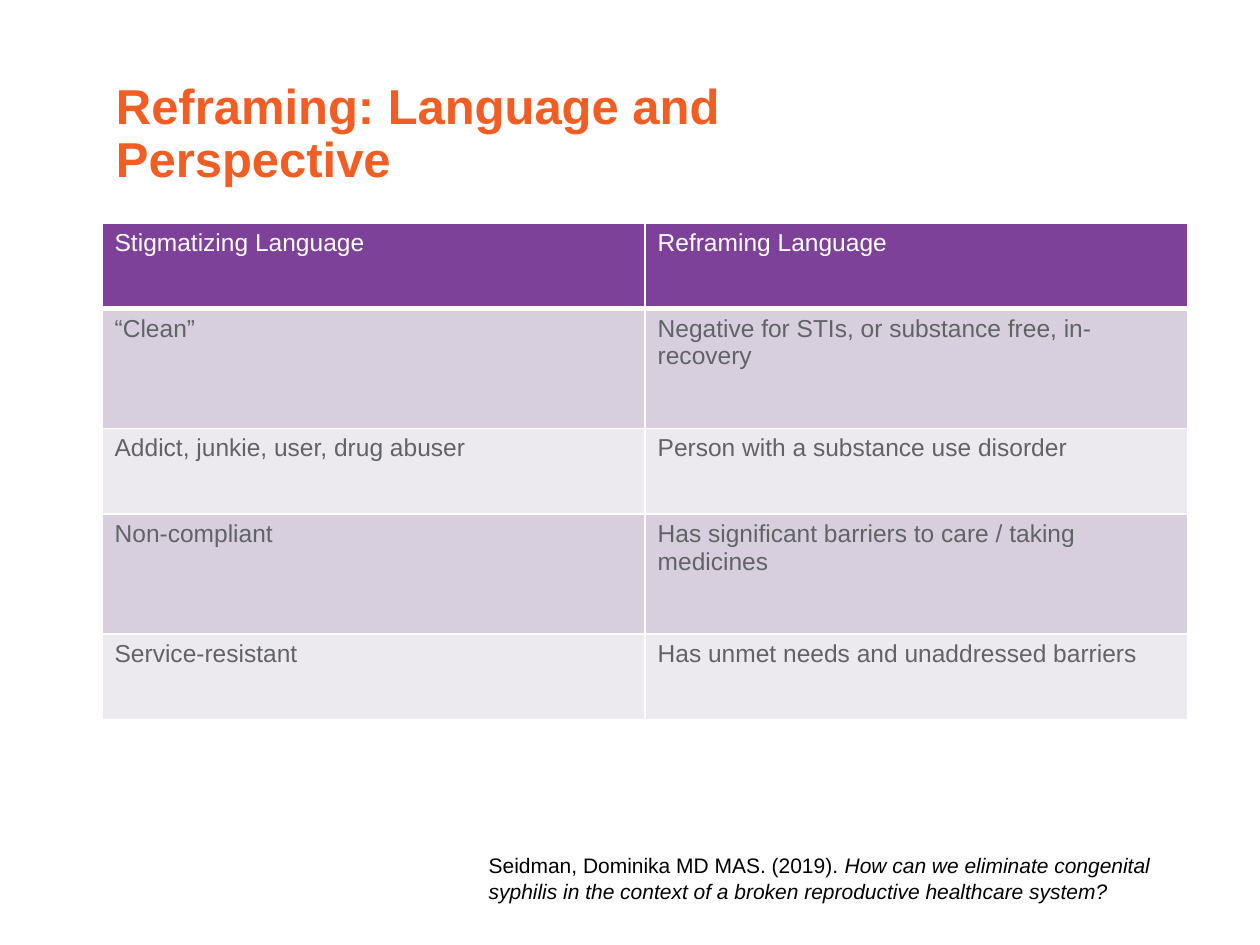
from typing import NamedTuple

from lxml import etree
from pptx import Presentation
from pptx.dml.color import RGBColor
from pptx.enum.text import MSO_ANCHOR, PP_ALIGN
from pptx.oxml.ns import qn
from pptx.util import Emu, Pt

LEFT = PP_ALIGN.LEFT
MIDDLE, TOP = MSO_ANCHOR.MIDDLE, MSO_ANCHOR.TOP
EMU_PER_PX = 9144  # 100 px to the inch
FONT = "Arial"
ORANGE, PURPLE, GRAY = "F15D22", "7D4199", "616365"
WHITE, BLACK = "FFFFFF", "000000"
BANDS = ("D7CFDE", "ECE9EF")


class Box(NamedTuple):
    left: int
    top: int
    width: int
    height: int


class Row(NamedTuple):
    stigmatizing: str
    reframing: str
    height: int


TITLE_BOX = Box(82, 60, 525, 95)
TABLE_BOX = Box(81, 177, 862, 394)
CITATION_BOX = Box(378, 672, 568, 50)
SHORT, TALL = 68, 95

ROWS = [
    Row("Stigmatizing Language", "Reframing Language", SHORT),
    Row("“Clean”", "Negative for STIs, or substance free, in-recovery", TALL),
    Row("Addict, junkie, user, drug abuser", "Person with a substance use disorder", SHORT),
    Row("Non-compliant", "Has significant barriers to care / taking medicines", TALL),
    Row("Service-resistant", "Has unmet needs and unaddressed barriers", SHORT),
]


def px(n: int) -> Emu:
    return Emu(n * EMU_PER_PX)


def color(value: str) -> RGBColor:
    return RGBColor.from_string(value)


def add_run(p, text: str, size: int, fill: str, bold: bool = False, italic: bool = False) -> None:
    r = p.add_run()
    r.text = text
    r.font.name = FONT
    r.font.size = Pt(size)
    r.font.bold = bold
    r.font.italic = italic
    r.font.color.rgb = color(fill)


def set_borders(cell, bottom: int) -> None:
    """White lines on all sides; must precede the cell's fill."""
    tc_pr = cell._tc.get_or_add_tcPr()
    for side, points in (("L", 1), ("R", 1), ("T", 1), ("B", bottom)):
        ln = etree.SubElement(tc_pr, qn(f"a:ln{side}"), w=str(Pt(points)))
        fill = etree.SubElement(ln, qn("a:solidFill"))
        etree.SubElement(fill, qn("a:srgbClr"), val=WHITE)


def add_title(s, text: str) -> None:
    sp = s.shapes.title
    sp.left, sp.top, sp.width, sp.height = map(px, TITLE_BOX)
    tf = sp.text_frame
    tf.word_wrap = True
    tf.vertical_anchor = MIDDLE
    p = tf.paragraphs[0]
    p.alignment = LEFT
    p.line_spacing = 0.9
    add_run(p, text, 28, ORANGE, bold=True)


def add_language_table(s, rows: list[Row]) -> None:
    table = s.shapes.add_table(len(rows), 2, *map(px, TABLE_BOX)).table
    for column in table.columns:
        column.width = px(TABLE_BOX.width // 2)
    for i, row in enumerate(rows):
        table.rows[i].height = px(row.height)
        header = i == 0
        for j, text in enumerate((row.stigmatizing, row.reframing)):
            cell = table.cell(i, j)
            set_borders(cell, bottom=3 if header else 1)
            cell.fill.solid()
            cell.fill.fore_color.rgb = color(PURPLE if header else BANDS[(i - 1) % 2])
            cell.vertical_anchor = TOP
            add_run(cell.text_frame.paragraphs[0], text, 14, WHITE if header else GRAY)


def add_citation(s) -> None:
    tf = s.shapes.add_textbox(*map(px, CITATION_BOX)).text_frame
    tf.word_wrap = True
    p = tf.paragraphs[0]
    add_run(p, "Seidman, Dominika MD MAS. (2019). ", 12, BLACK)
    add_run(
        p,
        "How can we eliminate congenital syphilis in the context of "
        "a broken reproductive healthcare system?",
        12, BLACK, italic=True,
    )


def main() -> None:
    prs = Presentation()
    prs.slide_width, prs.slide_height = px(1000), px(750)
    s = prs.slides.add_slide(prs.slide_layouts[5])  # title only

    add_title(s, "Reframing: Language and Perspective")
    add_language_table(s, ROWS)
    add_citation(s)
    prs.save("out.pptx")


if __name__ == "__main__":
    main()
